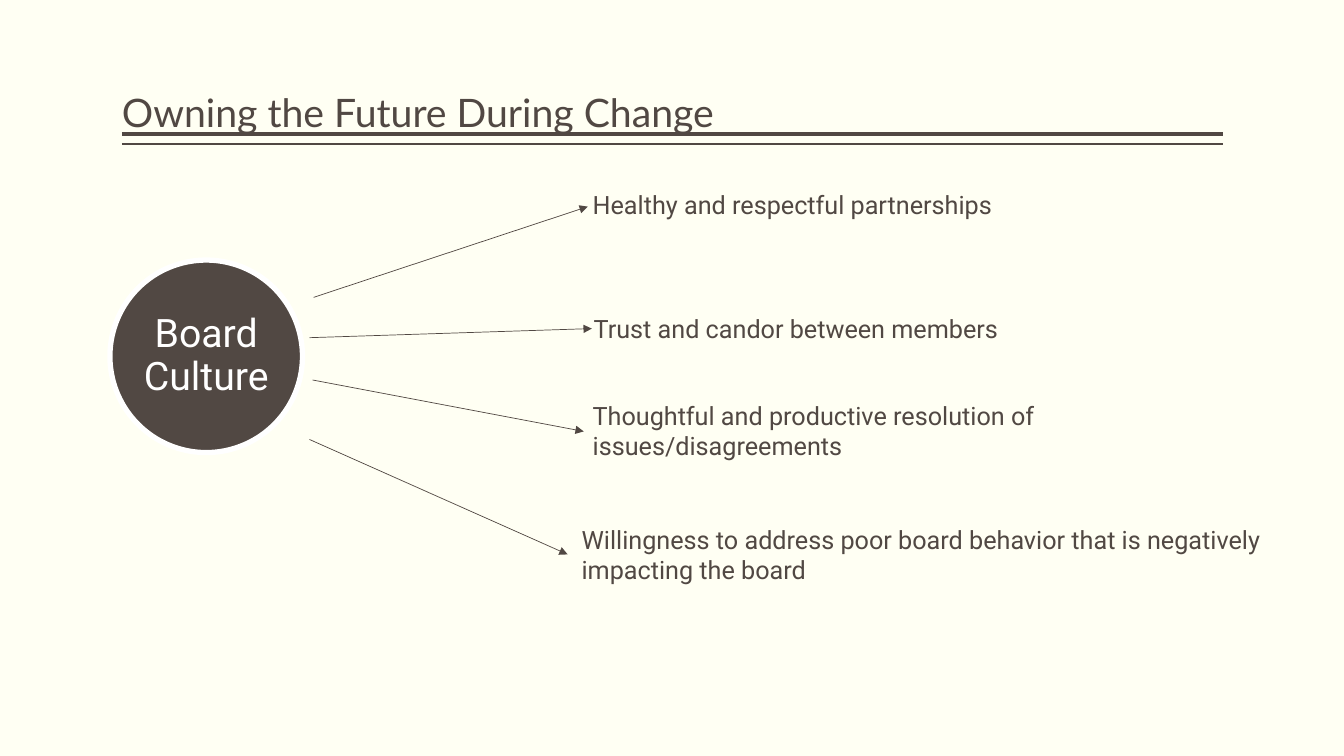
from dataclasses import dataclass

from pptx import Presentation
from pptx.dml.color import RGBColor
from pptx.enum.shapes import MSO_CONNECTOR, MSO_SHAPE
from pptx.enum.text import MSO_ANCHOR as Anchor, PP_ALIGN as Align
from pptx.oxml.ns import qn
from pptx.slide import Slide
from pptx.text.text import TextFrame
from pptx.util import Inches, Pt
from lxml.etree import SubElement

BROWN = RGBColor(0x51, 0x48, 0x43)
IVORY = RGBColor(0xFF, 0xFF, 0xF3)
WHITE = RGBColor(0xFF, 0xFF, 0xFF)

Point = tuple[float, float]
Frame = tuple[float, float, float, float]


@dataclass
class Trait:
    text: str
    frame: Frame
    arrow_start: Point
    arrow_end: Point


TRAITS = [
    Trait("Healthy and respectful partnerships",
          (5.78, 1.83, 4.38, 0.4), (3.11, 2.95), (5.83, 2.05)),
    Trait("Trust and candor between members",
          (5.79, 3.06, 4.38, 0.4), (3.07, 3.35), (5.87, 3.26)),
    Trait("Thoughtful and productive resolution of issues/disagreements",
          (5.78, 3.92, 7.1, 0.71), (3.1, 3.77), (5.79, 4.28)),
    Trait("Willingness to address poor board behavior that is negatively impacting the board",
          (5.67, 5.15, 7.1, 0.71), (3.07, 4.36), (5.63, 5.5)),
]


def write_text(box: TextFrame, text: str, *, size: float = 18, font: str = "Roboto",
               color: RGBColor = BROWN, align: Align = Align.LEFT,
               anchor: Anchor = Anchor.TOP, spacing: float = 1.0,
               inset: Point = (0.1, 0.05)) -> None:
    box.word_wrap = True
    box.vertical_anchor = anchor
    box.margin_left = box.margin_right = Inches(inset[0])
    box.margin_top = box.margin_bottom = Inches(inset[1])
    para = box.paragraphs[0]
    para.alignment = align
    para.line_spacing = spacing
    span = para.add_run()
    span.text = text
    span.font.size = Pt(size)
    span.font.name = font
    span.font.color.rgb = color


def add_text(page: Slide, text: str, frame: Frame, **style) -> None:
    box = page.shapes.add_textbox(*map(Inches, frame))
    write_text(box.text_frame, text, **style)


def add_line(page: Slide, start: Point, end: Point, width: float,
             arrow: bool = False) -> None:
    line = page.shapes.add_connector(MSO_CONNECTOR.STRAIGHT,
                                     *map(Inches, (*start, *end)))
    line.line.color.rgb = BROWN
    line.line.width = Pt(width)
    if arrow:
        SubElement(line.line._get_or_add_ln(), qn("a:tailEnd"), type="triangle")
    SubElement(line._element.spPr, qn("a:effectLst"))


def add_hub(page: Slide, text: str, frame: Frame) -> None:
    hub = page.shapes.add_shape(MSO_SHAPE.OVAL, *map(Inches, frame))
    hub.shadow.inherit = False
    hub.fill.solid()
    hub.fill.fore_color.rgb = BROWN
    hub.line.color.rgb = WHITE
    hub.line.width = Pt(3.78)
    write_text(hub.text_frame, text, size=28, color=WHITE, align=Align.CENTER,
               anchor=Anchor.MIDDLE, spacing=0.9, inset=(0.04, 0.04))


def main() -> None:
    deck = Presentation()
    deck.slide_width, deck.slide_height = Inches(13.33), Inches(7.5)
    page = deck.slides.add_slide(deck.slide_layouts[6])
    page.background.fill.solid()
    page.background.fill.fore_color.rgb = IVORY

    # Title over a double rule
    for top, width in ((1.33, 3), (1.43, 1)):
        add_line(page, (1.21, top), (12.13, top), width)
    add_text(page, "Owning the Future During Change", (1.21, 0.2, 10.91, 1.2),
             size=28, font="Lato", anchor=Anchor.BOTTOM, spacing=0.9, inset=(0, 0.05))

    # Traits with the arrows that lead to them
    for trait in TRAITS:
        add_line(page, trait.arrow_start, trait.arrow_end, 0.5, arrow=True)
        add_text(page, trait.text, trait.frame)

    # Central circle
    add_hub(page, "Board Culture", (1.09, 2.58, 1.91, 1.91))

    deck.save("out.pptx")


if __name__ == "__main__":
    main()
